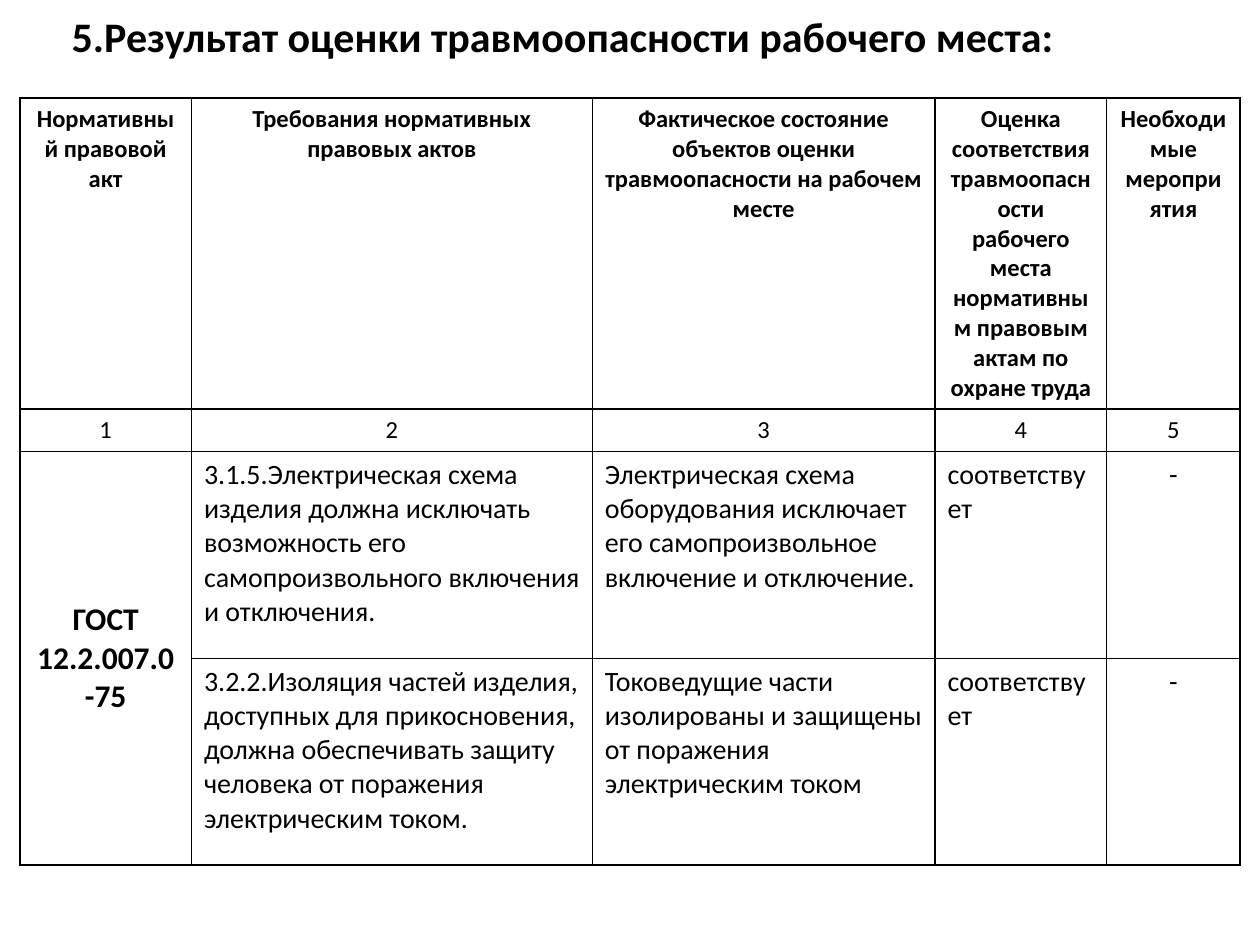
from lxml import etree
from pptx import Presentation
from pptx.dml.color import RGBColor
from pptx.enum.text import MSO_ANCHOR, PP_ALIGN
from pptx.oxml.ns import qn
from pptx.util import Cm, Pt

LEFT, CENTER = PP_ALIGN.LEFT, PP_ALIGN.CENTER
TOP, MIDDLE = MSO_ANCHOR.TOP, MSO_ANCHOR.MIDDLE
BLACK = RGBColor(0, 0, 0)
FONT = "Calibri"
TITLE_ONLY = 5

TITLE = "5.Результат оценки травмоопасности рабочего места:"
ROWS = [
    ["Нормативный правовой акт",
     "Требования нормативных правовых актов",
     "Фактическое состояние объектов оценки травмоопасности на рабочем месте",
     "Оценка соответствия травмоопасности рабочего места нормативным "
     "правовым актам по охране труда",
     "Необходимые мероприятия"],
    ["1", "2", "3", "4", "5"],
    ["ГОСТ 12.2.007.0-75",
     "3.1.5.Электрическая схема изделия должна исключать возможность его "
     "самопроизвольного включения и отключения.",
     "Электрическая схема оборудования исключает его самопроизвольное "
     "включение и отключение.",
     "соответствует", "-"],
    ["",
     "3.2.2.Изоляция частей изделия, доступных для прикосновения, должна "
     "обеспечивать защиту человека от поражения электрическим током.",
     "Токоведущие части изолированы и защищены от поражения "
     "электрическим током",
     "соответствует", "-"],
]
COLUMN_WIDTHS = [3.46, 8.08, 6.91, 3.46, 2.69]
ROW_HEIGHTS = [6.26, 0.85, 4.17, 4.17]


def format_text(text_frame, size, bold, alignment):
    for paragraph in text_frame.paragraphs:
        paragraph.alignment = alignment
        for run in paragraph.runs:
            run.font.name = FONT
            run.font.size = Pt(size)
            run.font.bold = bold
            run.font.color.rgb = BLACK


def cell_style(row, column):
    """Return size, bold, alignment and anchor for a table position."""
    if row < 2:
        return 14, row == 0, CENTER, TOP
    if column == 0:
        return 18, True, CENTER, MIDDLE
    return 16, False, CENTER if column == 4 else LEFT, TOP


def add_borders(cell):
    properties = cell._tc.get_or_add_tcPr()
    for index, side in enumerate(("a:lnL", "a:lnR", "a:lnT", "a:lnB")):
        line = etree.Element(qn(side), w=str(Pt(1)))
        fill = etree.SubElement(line, qn("a:solidFill"))
        etree.SubElement(fill, qn("a:srgbClr"), val=str(BLACK))
        properties.insert(index, line)


def add_title(slide):
    title = slide.shapes.title
    title.left, title.top, title.width, title.height = Cm(1.19), Cm(0), Cm(22.86), Cm(1.42)
    title.text_frame.text = TITLE
    title.text_frame.vertical_anchor = MIDDLE
    format_text(title.text_frame, 24, True, LEFT)


def add_assessment_table(slide):
    table = slide.shapes.add_table(
        len(ROWS), len(COLUMN_WIDTHS), Cm(0.4), Cm(1.98),
        Cm(sum(COLUMN_WIDTHS)), Cm(sum(ROW_HEIGHTS))).table
    table.first_row = table.horz_banding = False
    for column, width in zip(table.columns, COLUMN_WIDTHS):
        column.width = Cm(width)
    for row, height in zip(table.rows, ROW_HEIGHTS):
        row.height = Cm(height)
    for row, texts in enumerate(ROWS):
        for column, text in enumerate(texts):
            cell = table.cell(row, column)
            size, bold, alignment, anchor = cell_style(row, column)
            cell.text_frame.text = text
            cell.vertical_anchor = anchor
            cell.fill.background()
            format_text(cell.text_frame, size, bold, alignment)
            add_borders(cell)
    table.cell(2, 0).merge(table.cell(3, 0))


def main():
    presentation = Presentation()
    presentation.slide_width, presentation.slide_height = Cm(25.4), Cm(19.05)
    slide = presentation.slides.add_slide(presentation.slide_layouts[TITLE_ONLY])
    add_title(slide)
    add_assessment_table(slide)
    presentation.save("out.pptx")


if __name__ == "__main__":
    main()
